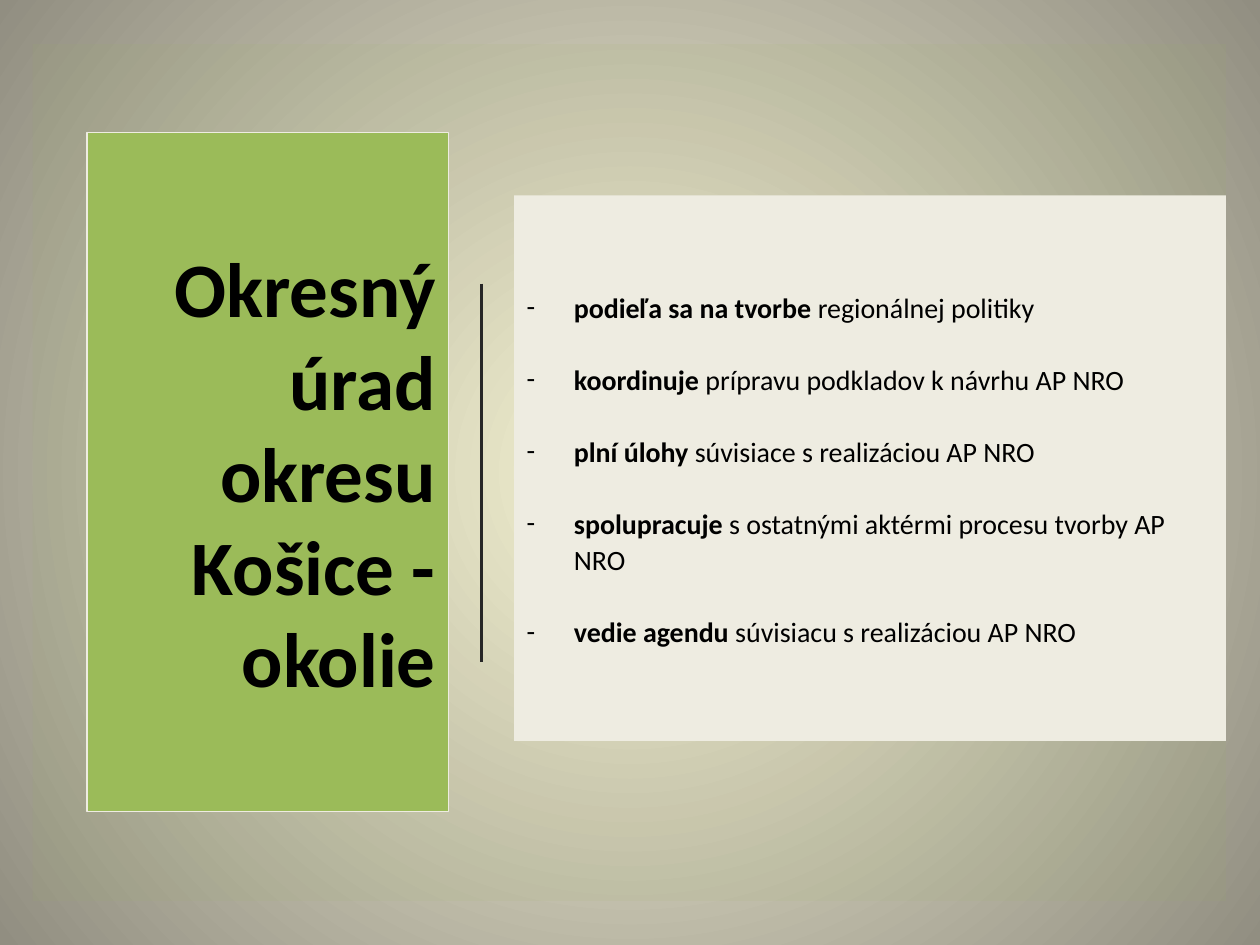
from lxml import etree
from pptx import Presentation
from pptx.dml.color import RGBColor
from pptx.enum import shapes, text
from pptx.oxml import parse_xml
from pptx.oxml.ns import qn
from pptx.util import Pt

TITLE = "Okresný úrad okresu Košice - okolie"
TASKS = [
    ("podieľa sa na tvorbe", " regionálnej politiky"),
    ("koordinuje", " prípravu podkladov k návrhu AP NRO"),
    ("plní úlohy", " súvisiace s realizáciou AP NRO"),
    ("spolupracuje", " s ostatnými aktérmi procesu tvorby AP NRO"),
    ("vedie agendu", " súvisiacu s realizáciou AP NRO"),
]
COLORS = {"green": "9BBB59", "cream": "EEECE1", "rule": "262626",
          "text": "000000", "center": "FCF7DD", "edge": "918E81"}
FONT = "Calibri"
LINE = 20.6
INDENT = 27


def color(name):
    return RGBColor.from_string(COLORS[name])


def paint(shape, name):
    shape.fill.solid()
    shape.fill.fore_color.rgb = color(name)


def place(shape, left, top, width, height):
    shape.left, shape.top = Pt(left), Pt(top)
    shape.width, shape.height = Pt(width), Pt(height)
    shape.text_frame.word_wrap = True
    shape.text_frame.auto_size = text.MSO_AUTO_SIZE.NONE
    shape.text_frame.vertical_anchor = text.MSO_ANCHOR.MIDDLE


def style(span, size, bold):
    span.font.name = FONT
    span.font.size = Pt(size)
    span.font.bold = bold
    span.font.color.rgb = color("text")


def radial_background(page):
    page.background.fill.gradient()
    gradient = page.background._cSld.find(".//" + qn("a:gradFill"))
    for child in list(gradient):
        gradient.remove(child)
    stops = etree.SubElement(gradient, qn("a:gsLst"))
    for position, name in ((0, "center"), (100000, "edge")):
        stop = etree.SubElement(stops, qn("a:gs"), pos=str(position))
        etree.SubElement(stop, qn("a:srgbClr"), val=COLORS[name])
    gradient.append(parse_xml(
        '<a:path xmlns:a="http://schemas.openxmlformats.org/drawingml/2006/main" path="circle">'
        '<a:fillToRect l="50000" t="50000" r="50000" b="50000"/></a:path>'))


def add_veil(page):
    veil = page.shapes.add_shape(
        shapes.MSO_SHAPE.RECTANGLE, Pt(18.72), Pt(25.2), Pt(681.84), Pt(489.6))
    veil.shadow.inherit = False
    paint(veil, "green")
    veil.line.fill.background()
    tint = veil._element.spPr.find(".//" + qn("a:srgbClr"))
    etree.SubElement(tint, qn("a:alpha"), val="8000")
    return veil


def add_rule(page):
    rule = page.shapes.add_connector(
        shapes.MSO_CONNECTOR.STRAIGHT, Pt(275), Pt(162), Pt(275), Pt(378))
    rule.line.color.rgb = color("rule")
    rule.line.width = Pt(1.5)
    etree.SubElement(rule._element.spPr, qn("a:effectLst"))
    return rule


def fill_title(box):
    place(box, 49.68, 75.6, 206.64, 388.08)
    paint(box, "green")
    box.line.color.rgb = color("cream")
    box.line.width = Pt(0.75)
    box.text_frame.text = TITLE
    para = box.text_frame.paragraphs[0]
    para.alignment = text.PP_ALIGN.RIGHT
    style(para.runs[0], 44, True)


def fill_tasks(box):
    place(box, 293.76, 111.6, 406.8, 311.76)
    paint(box, "cream")
    frame = box.text_frame
    for index, parts in enumerate(TASKS):
        para = frame.add_paragraph() if index else frame.paragraphs[0]
        para.line_spacing = Pt(LINE)
        para.space_before = Pt(LINE if index else 0)
        for part, bold in zip(parts, (True, False)):
            span = para.add_run()
            span.text = part
            style(span, 16, bold)
        properties = para._p.get_or_add_pPr()
        properties.set("marL", str(Pt(INDENT)))
        properties.set("indent", str(-Pt(INDENT)))
        etree.SubElement(properties, qn("a:buFont"), typeface=FONT)
        etree.SubElement(properties, qn("a:buChar"), char="-")


def main():
    deck = Presentation()
    deck.slide_width, deck.slide_height = Pt(720), Pt(540)
    page = deck.slides.add_slide(deck.slide_layouts[1])
    radial_background(page)
    title, tasks = page.placeholders
    tree = page.shapes._spTree
    for shape in (add_veil(page), add_rule(page), title, tasks):
        tree.append(shape._element)
    fill_title(title)
    fill_tasks(tasks)
    deck.save("out.pptx")


if __name__ == "__main__":
    main()
